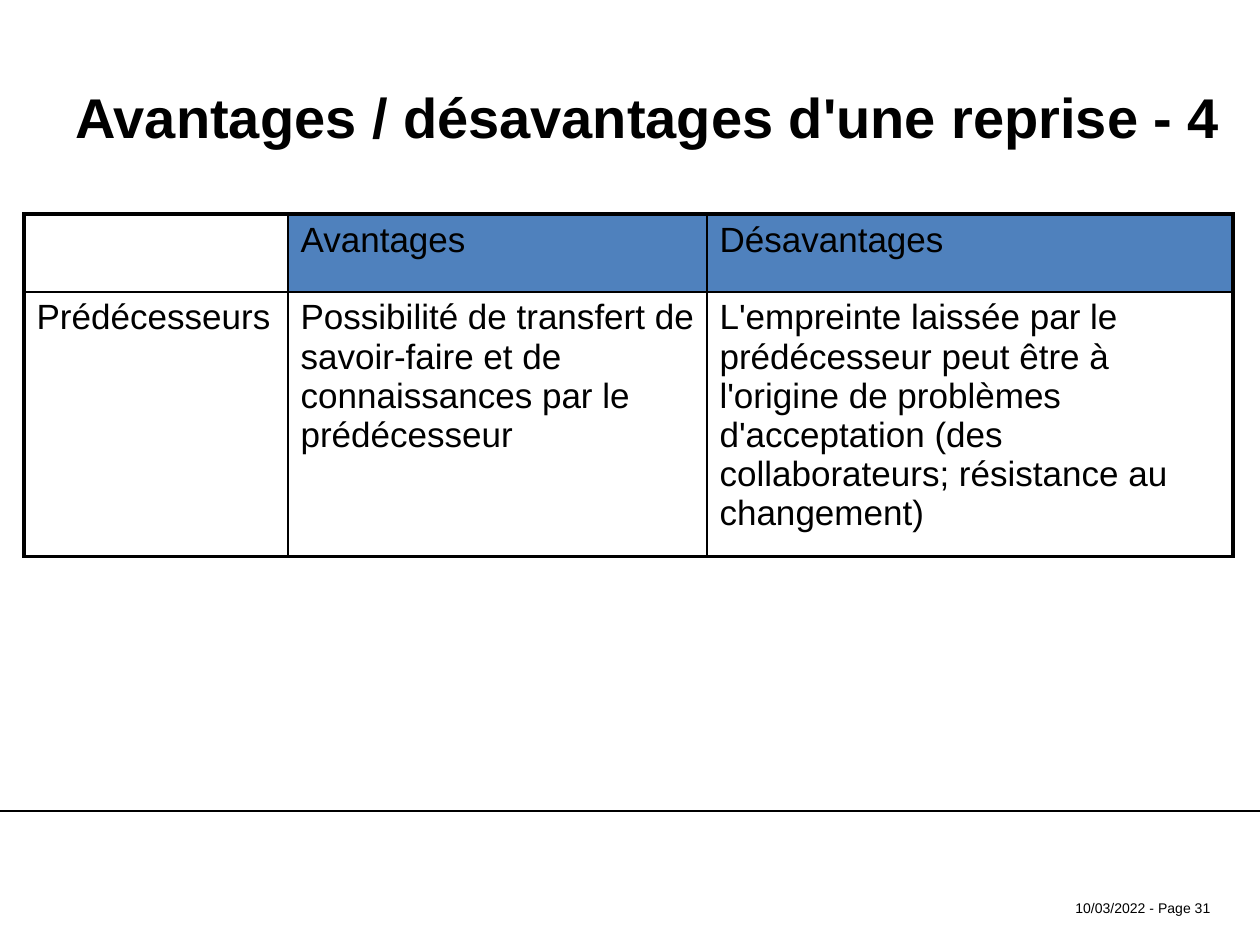
from lxml import etree
from pptx import Presentation
from pptx.dml.color import RGBColor
from pptx.enum.shapes import MSO_CONNECTOR
from pptx.enum.text import MSO_ANCHOR, PP_ALIGN
from pptx.oxml.ns import qn
from pptx.util import Emu, Pt

STRAIGHT = MSO_CONNECTOR.STRAIGHT
TOP, MIDDLE = MSO_ANCHOR.TOP, MSO_ANCHOR.MIDDLE
LEFT, RIGHT = PP_ALIGN.LEFT, PP_ALIGN.RIGHT

BLACK = RGBColor(0x00, 0x00, 0x00)
HEADER_BLUE = RGBColor(0x4F, 0x81, 0xBD)
FONT = "Arial"
OUTER_BORDER, INNER_BORDER = Pt(2.25), Pt(1)

TITLE = "Avantages / désavantages d'une reprise - 4"
FOOTER = "10/03/2022 - Page 31"
ROWS = [
    ["", "Avantages", "Désavantages"],
    [
        "Prédécesseurs",
        "Possibilité de transfert de savoir-faire et de connaissances par le prédécesseur",
        "L'empreinte laissée par le prédécesseur peut être à l'origine de problèmes "
        "d'acceptation (des collaborateurs; résistance au changement)",
    ],
]

SLIDE_WIDTH, SLIDE_HEIGHT = 1260, 945
TITLE_BOX = (63, 38, 1176, 157)
FOOTER_BOX = (1051, 893, 172, 29)
TABLE_LEFT, TABLE_TOP = 24, 214
COLUMN_WIDTHS = [264, 419, 526]
ROW_HEIGHTS = [78, 264]
RULE_Y = 811


def px(length):
    return Emu(round(length * 914400 / 126))


def add_run(paragraph, text, size, bold=False):
    run = paragraph.add_run()
    run.text = text
    run.font.name = FONT
    run.font.size = Pt(size)
    run.font.bold = bold
    run.font.color.rgb = BLACK


def add_text(slide, box, text, size, bold=False, alignment=LEFT, anchor=TOP):
    frame = slide.shapes.add_textbox(*map(px, box)).text_frame
    frame.word_wrap = True
    frame.vertical_anchor = anchor
    paragraph = frame.paragraphs[0]
    paragraph.alignment = alignment
    add_run(paragraph, text, size, bold)


def set_borders(cell, widths):
    """Draw solid borders; they must precede the fill in the cell properties."""
    properties = cell._tc.get_or_add_tcPr()
    for position, (side, width) in enumerate(widths.items()):
        line = etree.Element(qn(f"a:ln{side}"), w=str(width))
        fill = etree.SubElement(line, qn("a:solidFill"))
        etree.SubElement(fill, qn("a:srgbClr"), val=str(BLACK))
        properties.insert(position, line)


def add_comparison_table(slide):
    row_count, column_count = len(ROWS), len(COLUMN_WIDTHS)
    table = slide.shapes.add_table(
        row_count, column_count, px(TABLE_LEFT), px(TABLE_TOP),
        px(sum(COLUMN_WIDTHS)), px(sum(ROW_HEIGHTS)),
    ).table
    for column, width in zip(table.columns, COLUMN_WIDTHS):
        column.width = px(width)
    for row, height in zip(table.rows, ROW_HEIGHTS):
        row.height = px(height)

    for row_index, texts in enumerate(ROWS):
        for column_index, text in enumerate(texts):
            cell = table.cell(row_index, column_index)
            if text:
                add_run(cell.text_frame.paragraphs[0], text, 20)
            if row_index == 0 and text:
                cell.fill.solid()
                cell.fill.fore_color.rgb = HEADER_BLUE
            else:
                cell.fill.background()
            on_edge = {
                "L": column_index == 0,
                "R": column_index == column_count - 1,
                "T": row_index == 0,
                "B": row_index == row_count - 1,
            }
            set_borders(cell, {side: OUTER_BORDER if outer else INNER_BORDER
                               for side, outer in on_edge.items()})


def add_footer_rule(slide):
    rule = slide.shapes.add_connector(STRAIGHT, 0, px(RULE_Y), px(SLIDE_WIDTH), px(RULE_Y))
    rule.line.color.rgb = BLACK
    rule.line.width = Pt(0.75)
    etree.SubElement(rule._element.spPr, qn("a:effectLst"))


def main():
    presentation = Presentation()
    presentation.slide_width = px(SLIDE_WIDTH)
    presentation.slide_height = px(SLIDE_HEIGHT)
    slide = presentation.slides.add_slide(presentation.slide_layouts[6])
    add_text(slide, FOOTER_BOX, FOOTER, 8, alignment=RIGHT)
    add_footer_rule(slide)
    add_text(slide, TITLE_BOX, TITLE, 32, bold=True, anchor=MIDDLE)
    add_comparison_table(slide)
    presentation.save("out.pptx")


if __name__ == "__main__":
    main()
